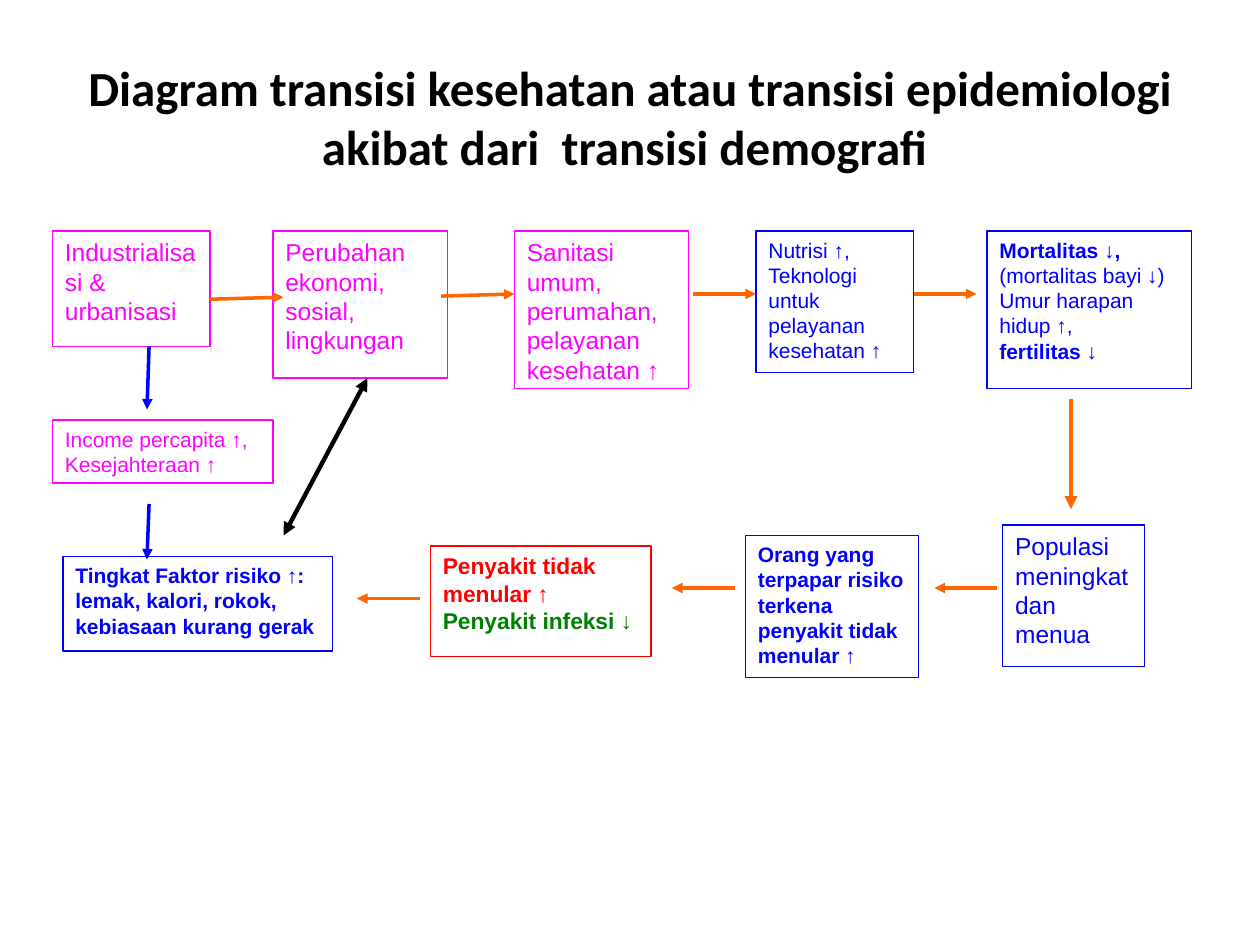
"""Build a slide showing how demographic change drives the health transition."""
from lxml import etree
from pptx import Presentation, util as u
from pptx.dml import color
from pptx.enum import shapes, text
from pptx.oxml import ns

MAGENTA, BLUE, RED, GREEN = "FF00FF", "0000FF", "FF0000", "008000"
ORANGE, BLACK, WHITE = "FF6600", "000000", "FFFFFF"

deck = Presentation()
deck.slide_width, deck.slide_height = u.Inches(10), u.Inches(7.5)
COLUMN, ROW = deck.slide_width / 120, deck.slide_height / 90


def grid(*values):
    """Turn alternating columns and rows into lengths."""
    return [round(value * (COLUMN, ROW)[index % 2]) for index, value in enumerate(values)]


def paint(target, value):
    """Give a fill, line or font its colour."""
    if hasattr(target, "solid"):
        target.solid()
        target = target.fore_color
    else:
        target = target.color
    target.rgb = color.RGBColor.from_string(value)


page = deck.slides.add_slide(deck.slide_layouts[5])
title = page.shapes.title
title.left, title.top, title.width, title.height = grid(6, 3.6, 108, 15)
title.text_frame.text = "Diagram transisi kesehatan atau transisi epidemiologi akibat dari  transisi demografi "
title.text_frame.vertical_anchor = text.MSO_ANCHOR.MIDDLE
heading = title.text_frame.paragraphs[0]
heading.alignment = text.PP_ALIGN.CENTER
span = heading.runs[0]
span.font.name, span.font.size, span.font.bold = "Calibri", u.Pt(28), True
paint(span.font, BLACK)

stages = [
    ((5, 22, 15, 11), MAGENTA, 14, False, "Industrialisasi & urbanisasi"),
    ((26, 22, 16.6, 14), MAGENTA, 14, False, "Perubahan ekonomi, sosial, lingkungan"),
    ((49, 22, 16.6, 15), MAGENTA, 14, False, "Sanitasi umum, perumahan, pelayanan kesehatan ↑"),
    ((72, 22, 15, 13.5), BLUE, 12, False, "Nutrisi ↑, Teknologi untuk pelayanan kesehatan ↑"),
    ((94, 22, 19.5, 15), BLUE, 12, True, "Mortalitas ↓,\nUmur harapan hidup ↑,\nfertilitas ↓"),
    ((5, 40, 21, 6), MAGENTA, 12, False, "Income percapita ↑,\nKesejahteraan ↑"),
    ((6, 53, 25.7, 9), BLUE, 12, True,
     "Tingkat Faktor risiko ↑: lemak, kalori, rokok, kebiasaan kurang gerak"),
    ((41, 52, 21, 10.5), RED, 13, True, "Penyakit tidak menular ↑\nPenyakit infeksi ↓"),
    ((71, 51, 16.5, 13.5), BLUE, 12, True,
     "Orang yang terpapar risiko terkena penyakit tidak menular ↑"),
    ((95.5, 50, 13.5, 13.5), BLUE, 14, False, "Populasi meningkat dan menua"),
]
regular = (" (mortalitas bayi ↓)", "Umur harapan hidup ↑,")

for place, tint, size, bold, wording in stages:
    box = page.shapes.add_shape(shapes.MSO_SHAPE.RECTANGLE, *grid(*place))
    box.shadow.inherit = False
    paint(box.fill, WHITE)
    paint(box.line, tint)
    box.line.width = u.Pt(0.75)
    frame = box.text_frame
    frame.text = wording
    frame.word_wrap = True
    frame.vertical_anchor = text.MSO_ANCHOR.TOP
    for para in frame.paragraphs:
        para.alignment = text.PP_ALIGN.LEFT
        if para.text.startswith("Mortalitas"):
            para.add_run().text = regular[0]
        for span in para.runs:
            span.font.name, span.font.size = "Arial", u.Pt(size)
            span.font.bold = bold and span.text not in regular
            paint(span.font, GREEN if span.text.startswith("Penyakit infeksi") else tint)

arrows = [
    ((20, 28.5, 27, 28.3), ORANGE, 2, ["tailEnd"]),
    ((42, 28.2, 49, 28), ORANGE, 2, ["tailEnd"]),
    ((87, 28, 93, 28), ORANGE, 2, ["tailEnd"]),
    ((66, 28, 72, 28), ORANGE, 2, ["tailEnd"]),
    ((102, 38, 102, 48.5), ORANGE, 2.5, ["tailEnd"]),
    ((95, 56, 89, 56), ORANGE, 2, ["tailEnd"]),
    ((70, 56, 64, 56), ORANGE, 2, ["tailEnd"]),
    ((40, 57, 34, 57), ORANGE, 2, ["tailEnd"]),
    ((14.2, 33, 14, 39), BLUE, 2, ["tailEnd"]),
    ((14.2, 48, 14, 53.3), BLUE, 2, ["tailEnd"]),
    ((27, 51, 35, 36), BLACK, 2.5, ["headEnd", "tailEnd"]),
]

for ends, tint, width, tips in arrows:
    arrow = page.shapes.add_connector(shapes.MSO_CONNECTOR.STRAIGHT, *grid(*ends))
    paint(arrow.line, tint)
    arrow.line.width = u.Pt(width)
    for tip in tips:
        etree.SubElement(arrow.line._get_or_add_ln(), ns.qn("a:" + tip), type="triangle")
    etree.SubElement(arrow._element.spPr, ns.qn("a:effectLst"))

deck.save("out.pptx")
